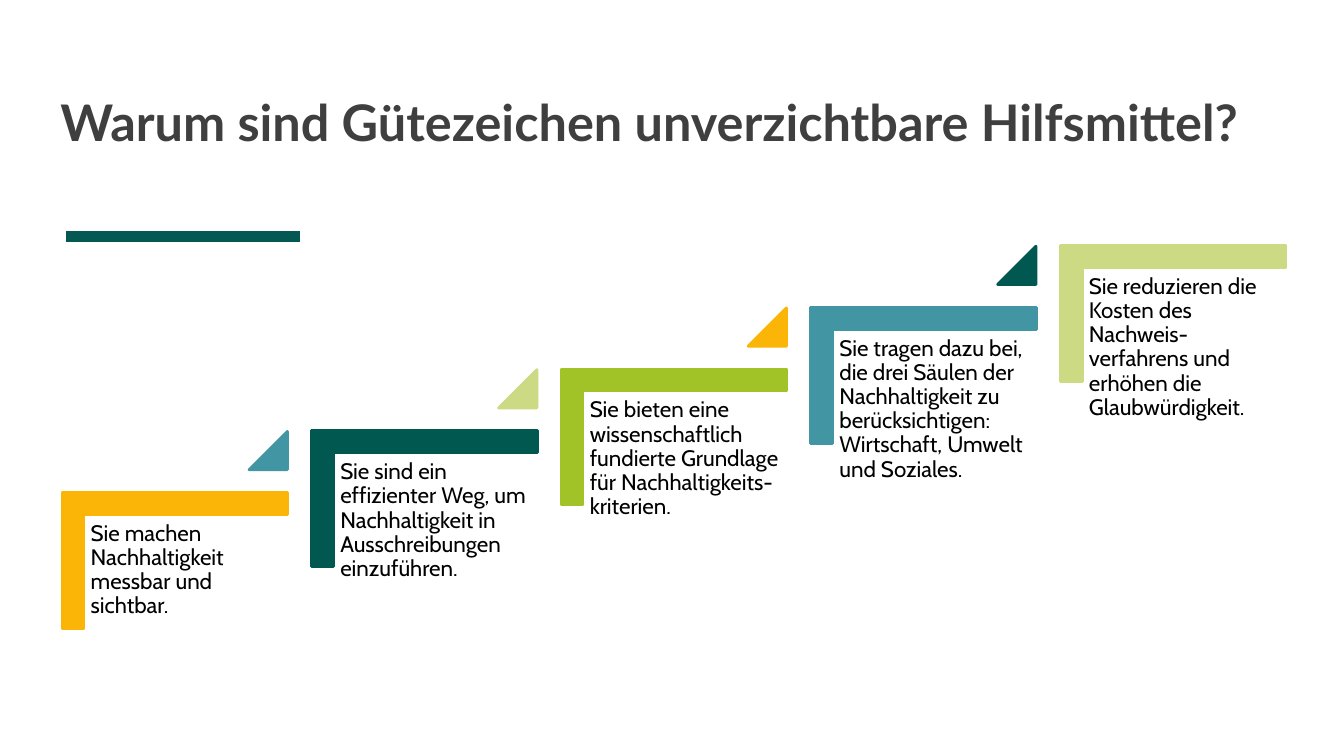
from pptx import Presentation
from pptx.dml.color import RGBColor
from pptx.enum.shapes import MSO_CONNECTOR, MSO_SHAPE
from pptx.enum.text import MSO_ANCHOR
from pptx.oxml.ns import qn
from pptx.util import Inches, Pt
from lxml import etree

CORNER = MSO_SHAPE.CORNER
TRIANGLE = MSO_SHAPE.ISOSCELES_TRIANGLE
STRAIGHT = MSO_CONNECTOR.STRAIGHT
TOP, MIDDLE = MSO_ANCHOR.TOP, MSO_ANCHOR.MIDDLE

TITLE = "Warum sind Gütezeichen unverzichtbare Hilfsmittel?"
# reason, colour of its step, colour of the triangle leading to the next step
STEPS = [
    ("Sie machen Nachhaltigkeit messbar und sichtbar.", "FAB506", "4295A2"),
    ("Sie sind ein effizienter Weg, um Nachhaltigkeit in Ausschreibungen einzuführen.",
     "005851", "CBDA83"),
    ("Sie bieten eine wissenschaftlich fundierte Grundlage für Nachhaltigkeits- kriterien.",
     "A2C328", "FAB506"),
    ("Sie tragen dazu bei, die drei Säulen der Nachhaltigkeit zu berücksichtigen: "
     "Wirtschaft, Umwelt und Soziales.", "4295A2", "005851"),
    ("Sie reduzieren die Kosten des Nachweis- verfahrens und erhöhen die Glaubwürdigkeit.",
     "CBDA83", None),
]
FIRST_CORNER, LAST_CORNER = (1.06, 4.44), (10.96, 1.99)
CORNER_SIZE = (1.35, 2.24)
REASON_OFFSET, REASON_SIZE = (-0.23, 0.67), (2.02, 1.77)
TRIANGLE_OFFSET, TRIANGLE_SIDE = (1.41, -0.16), 0.38


def rgb(value):
    return RGBColor.from_string(value)


def add_text(slide, text, box, font, size, color, spacing, inset=0, anchor=TOP, bold=False):
    frame = slide.shapes.add_textbox(*map(Inches, box)).text_frame
    frame.word_wrap = True
    frame.vertical_anchor = anchor
    frame.margin_left = frame.margin_right = Inches(inset)
    frame.margin_top = frame.margin_bottom = Inches(inset)
    frame.text = text
    paragraph = frame.paragraphs[0]
    paragraph.line_spacing = spacing
    run_font = paragraph.runs[0].font
    run_font.name, run_font.size, run_font.bold = font, Pt(size), bold
    run_font.color.rgb = rgb(color)


def add_solid(slide, kind, box, color, adjustments):
    """Add a preset shape whose outline has the colour of its fill."""
    solid = slide.shapes.add_shape(kind, *map(Inches, box))
    solid.shadow.inherit = False
    for index, value in enumerate(adjustments):
        solid.adjustments[index] = value
    solid.fill.solid()
    solid.fill.fore_color.rgb = solid.line.color.rgb = rgb(color)
    solid.line.width = Pt(2)
    return solid


def add_step(slide, index, reason, color, next_color):
    left, top = (first + (last - first) * index / (len(STEPS) - 1)
                 for first, last in zip(FIRST_CORNER, LAST_CORNER))
    corner = add_solid(slide, CORNER, (left, top, *CORNER_SIZE), color, (0.161, 0.161))
    corner.rotation = 90
    dx, dy = REASON_OFFSET
    add_text(slide, reason, (left + dx, top + dy, *REASON_SIZE),
             "Cabin", 16, "000000", 0.9, inset=0.07)
    if next_color:
        dx, dy = TRIANGLE_OFFSET
        add_solid(slide, TRIANGLE, (left + dx, top + dy, TRIANGLE_SIDE, TRIANGLE_SIDE),
                  next_color, (1,))


def main():
    deck = Presentation()
    deck.slide_width, deck.slide_height = Inches(13.33), Inches(7.5)
    slide = deck.slides.add_slide(deck.slide_layouts[6])

    accent = slide.shapes.add_connector(
        STRAIGHT, Inches(0.65), Inches(2.35), Inches(2.98), Inches(2.35))
    accent.line.color.rgb = rgb("035854")
    accent.line.width = Pt(8)
    etree.SubElement(accent._element.spPr, qn("a:effectLst"))

    add_text(slide, TITLE, (0.6, 0.76, 12.03, 1), "Lato", 36, "3F3F3F", 0.8,
             anchor=MIDDLE, bold=True)
    for index, step in enumerate(STEPS):
        add_step(slide, index, *step)
    deck.save("out.pptx")


if __name__ == "__main__":
    main()
